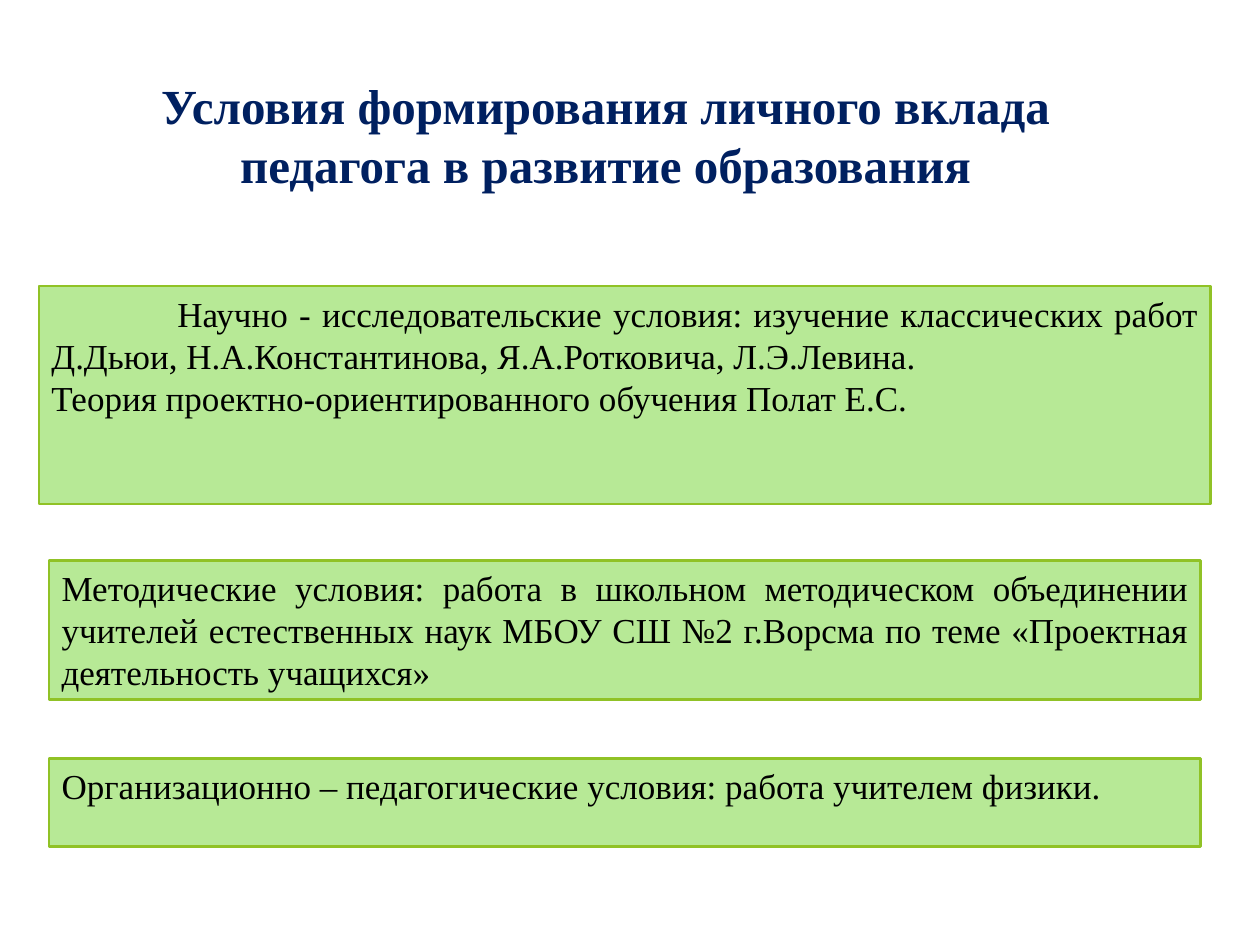
from pptx import Presentation
from pptx.dml.color import RGBColor
from pptx.enum.shapes import MSO_SHAPE
from pptx.enum.text import MSO_ANCHOR, MSO_AUTO_SIZE, PP_ALIGN
from pptx.util import Inches, Pt

RECT = MSO_SHAPE.RECTANGLE
TOP, MIDDLE = MSO_ANCHOR.TOP, MSO_ANCHOR.MIDDLE
LEFT, CENTER, JUSTIFY = PP_ALIGN.LEFT, PP_ALIGN.CENTER, PP_ALIGN.JUSTIFY
FONT = "Times New Roman"
TITLE = "Условия формирования личного вклада педагога в развитие образования"
CONDITIONS = [
    ((0.31, 2.27, 9.3, 1.73), [
        ("Научно - исследовательские условия: изучение классических работ "
         "Д.Дьюи, Н.А.Константинова, Я.А.Ротковича, Л.Э.Левина.", JUSTIFY, 1),
        ("Теория проектно-ориентированного обучения Полат Е.С.", JUSTIFY, 0),
    ]),
    ((0.39, 4.45, 9.14, 1.1), [
        ("Методические условия: работа в школьном методическом объединении "
         "учителей естественных наук МБОУ СШ №2 г.Ворсма по теме "
         "«Проектная деятельность учащихся»", JUSTIFY, 0),
    ]),
    ((0.39, 6.02, 9.14, 0.7), [
        ("Организационно – педагогические условия: работа учителем физики.", LEFT, 0),
    ]),
]


def rgb(value):
    return RGBColor.from_string(value)


def add_text(p, text, size, color, align, bold=False):
    p.alignment = align
    r = p.add_run()
    r.text = text
    r.font.name = FONT
    r.font.size = Pt(size)
    r.font.bold = bold
    r.font.color.rgb = rgb(color)


def set_frame(tf, anchor):
    tf.word_wrap = True
    tf.auto_size = MSO_AUTO_SIZE.NONE
    tf.vertical_anchor = anchor
    tf.margin_left = tf.margin_right = Inches(0.1)
    tf.margin_top = tf.margin_bottom = Inches(0.05)


def place_title(s, box):
    sp = s.shapes.title
    sp.left, sp.top, sp.width, sp.height = map(Inches, box)
    set_frame(sp.text_frame, MIDDLE)
    add_text(sp.text_frame.paragraphs[0], TITLE, 28, "002060", CENTER, True)


def add_condition(s, box, paragraphs):
    sp = s.shapes.add_shape(RECT, *map(Inches, box))
    sp.shadow.inherit = False
    sp.fill.solid()
    sp.fill.fore_color.rgb = rgb("B7E996")
    sp.line.color.rgb = rgb("90C226")
    sp.line.width = Pt(1.5)
    tf = sp.text_frame
    set_frame(tf, TOP)
    for i, (text, align, indent) in enumerate(paragraphs):
        p = tf.add_paragraph() if i else tf.paragraphs[0]
        add_text(p, text, 20, "000000", align)
        if indent:
            p._p.get_or_add_pPr().set("indent", str(Inches(indent)))


def main():
    prs = Presentation()
    prs.slide_width, prs.slide_height = Inches(10), Inches(7.5)
    s = prs.slides.add_slide(prs.slide_layouts[5])
    place_title(s, (0.47, 0.55, 8.67, 1.03))
    for box, paragraphs in CONDITIONS:
        add_condition(s, box, paragraphs)
    prs.save("out.pptx")


if __name__ == "__main__":
    main()
